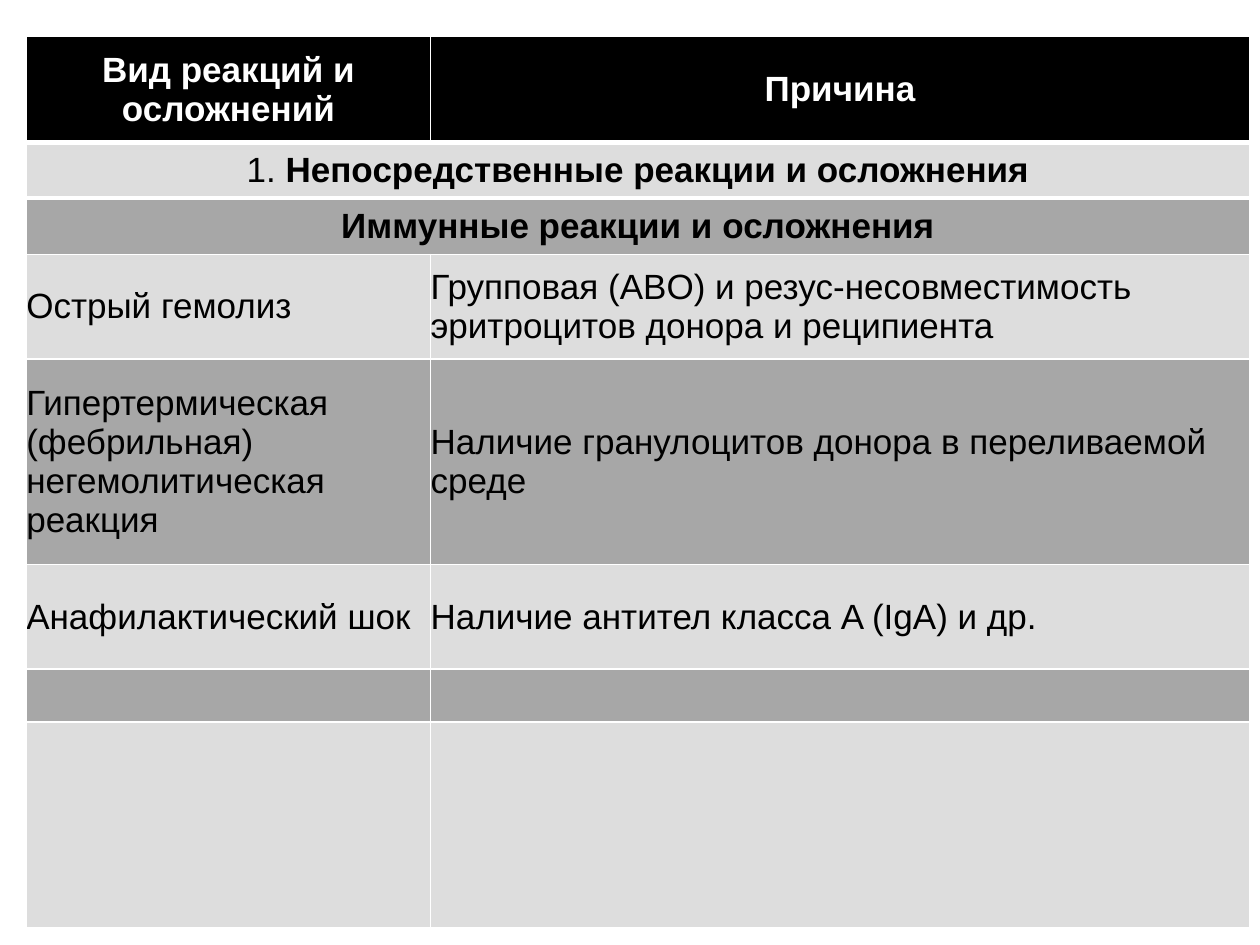
from lxml.etree import SubElement
from pptx import Presentation
from pptx.dml.color import RGBColor
from pptx.enum.text import MSO_ANCHOR, PP_ALIGN
from pptx.oxml.ns import qn
from pptx.util import Cm, Pt

HEADINGS = ["Вид реакций и осложнений", "Причина"]
SECTIONS = [
    [("1. ", False), ("Непосредственные реакции и осложнения", True)],
    [("Иммунные реакции и осложнения", True)],
]
REACTIONS = [
    ["Острый гемолиз",
     "Групповая (ABO) и резус-несовместимость эритроцитов донора и реципиента"],
    ["Гипертермическая (фебрильная) негемолитическая реакция",
     "Наличие гранулоцитов донора в переливаемой среде"],
    ["Анафилактический шок", "Наличие антител класса A (IgA) и др."],
    ["", ""],
    ["", ""],
]
COLUMN_WIDTHS = [8.15, 16.51]
ROW_HEIGHTS = [2.13, 1.12, 1.14, 2.11, 4.14, 2.11, 1.07, 4.14]


def color(value):
    return RGBColor.from_string(value)


def write(paragraph, text, font="Arial", size=20, ink="000000", bold=False):
    run = paragraph.add_run()
    run.text = text
    run.font.name = font
    run.font.size = Pt(size)
    run.font.bold = bold
    run.font.color.rgb = color(ink)


class ReactionSlide:
    header_fill = "000000"
    header_ink = "FFFFFF"
    bands = ["DDDDDD", "A7A7A7"]
    rule = "FFFFFF"
    thin, thick = 1, 3
    thick_after = (0, 1)

    def __init__(self, deck):
        self.slide = deck.slides.add_slide(deck.slide_layouts[6])

    def grid(self, left, top, widths, heights):
        frame = self.slide.shapes.add_table(
            len(heights), len(widths), Cm(left), Cm(top), Cm(sum(widths)), Cm(sum(heights)))
        table = frame.table
        for column, width in zip(table.columns, widths):
            column.width = Cm(width)
        for index, (row, height) in enumerate(zip(table.rows, heights)):
            row.height = Cm(height)
            fill = self.bands[(index - 1) % 2] if index else self.header_fill
            for cell in row.cells:
                self.style_cell(cell, fill, index)
        return table

    def style_cell(self, cell, fill, index):
        cell.margin_left = cell.margin_right = cell.margin_top = cell.margin_bottom = 0
        cell.vertical_anchor = MSO_ANCHOR.MIDDLE
        above = self.thick if index - 1 in self.thick_after else self.thin
        below = self.thick if index in self.thick_after else self.thin
        self.borders(cell, {"L": self.thin, "R": self.thin, "T": above, "B": below})
        cell.fill.solid()
        cell.fill.fore_color.rgb = color(fill)

    def borders(self, cell, widths):
        properties = cell._tc.get_or_add_tcPr()
        for side, width in widths.items():
            line = SubElement(properties, qn(f"a:ln{side}"), w=str(Pt(width)))
            paint = SubElement(line, qn("a:solidFill"))
            SubElement(paint, qn("a:srgbClr"), val=self.rule)

    def fill_cell(self, cell, parts, align=PP_ALIGN.LEFT, ink="000000"):
        paragraph = cell.text_frame.paragraphs[0]
        paragraph.alignment = align
        for text, bold in parts:
            if text:
                write(paragraph, text, ink=ink, bold=bold)


def main():
    deck = Presentation()
    deck.slide_width, deck.slide_height = Cm(25.4), Cm(19.05)
    page = ReactionSlide(deck)
    table = page.grid(0.53, 0.74, COLUMN_WIDTHS, ROW_HEIGHTS)

    for column, heading in enumerate(HEADINGS):
        page.fill_cell(table.cell(0, column), [(heading, True)], PP_ALIGN.CENTER, page.header_ink)
    for row, section in enumerate(SECTIONS, 1):
        table.cell(row, 0).merge(table.cell(row, 1))
        page.fill_cell(table.cell(row, 0), section, PP_ALIGN.CENTER)
    for row, reaction in enumerate(REACTIONS, 1 + len(SECTIONS)):
        for column, text in enumerate(reaction):
            page.fill_cell(table.cell(row, column), [(text, False)])

    deck.save("out.pptx")


if __name__ == "__main__":
    main()
